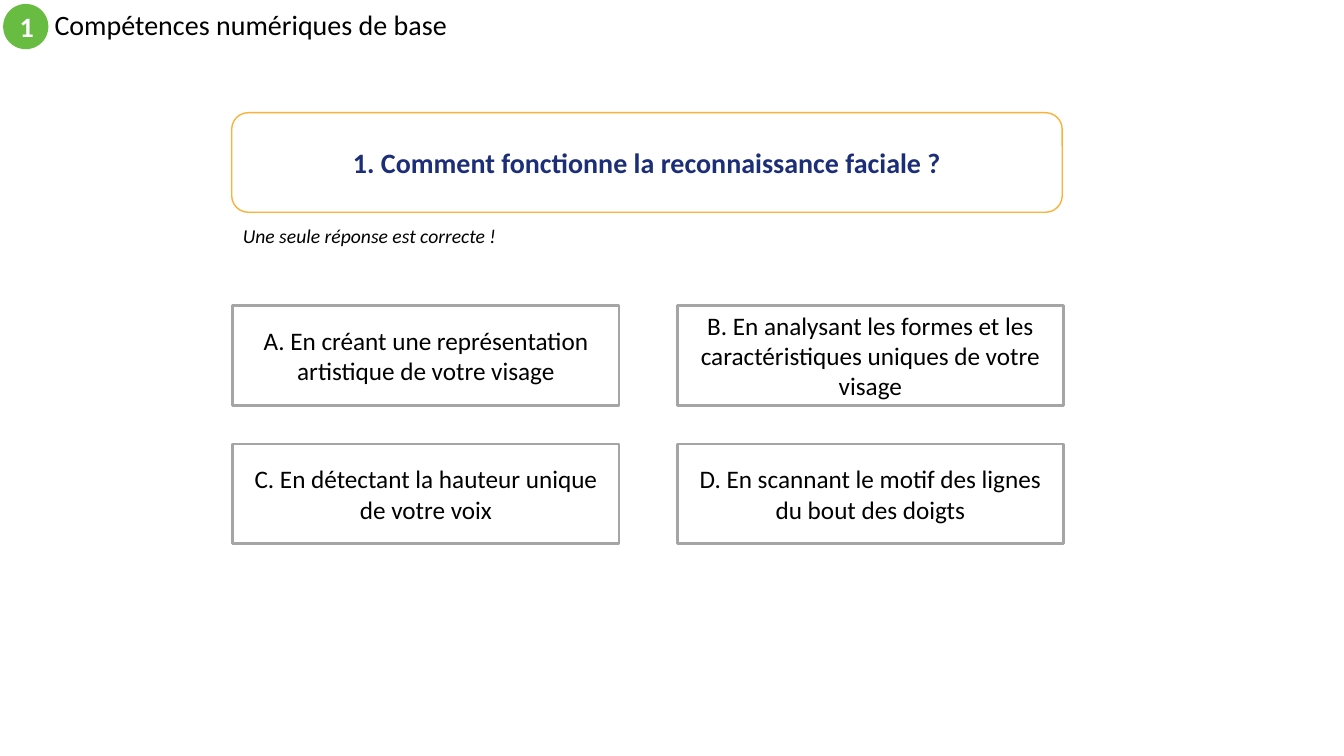
import pptx
import pptx.util
import pptx.dml.color
import pptx.enum.shapes
import pptx.enum.text

Cm = pptx.util.Cm
Pt = pptx.util.Pt
SHAPE = pptx.enum.shapes.MSO_SHAPE
ALIGN = pptx.enum.text.PP_ALIGN
ANCHOR = pptx.enum.text.MSO_ANCHOR

SECTION_NUMBER = "1"
SECTION = "Compétences numériques de base"
QUESTION = "1. Comment fonctionne la reconnaissance faciale ?"
HINT = "Une seule réponse est correcte !"
ANSWERS = [
    "A. En créant une représentation artistique de votre visage",
    "B. En analysant les formes et les caractéristiques uniques de votre visage",
    "C. En détectant la hauteur unique de votre voix",
    "D. En scannant le motif des lignes du bout des doigts",
]
COLORS = {
    "white": "FFFFFF",
    "black": "000000",
    "green": "68BC42",
    "orange": "FCB13A",
    "navy": "1C2E78",
    "gray": "A5A5A5",
}
FONT = "Calibri"
COLUMNS = 2
GRID_LEFT, GRID_TOP = 5.87, 7.7
STEP_X, STEP_Y = 11.2, 3.49
ANSWER_W, BOX_H = 9.73, 2.51


def rgb(name):
    return pptx.dml.color.RGBColor.from_string(COLORS[name])


def write(sp, text, size, color="black", align=ALIGN.CENTER,
          anchor=ANCHOR.MIDDLE, bold=False, italic=False):
    tf = sp.text_frame
    tf.word_wrap = True
    tf.auto_size = pptx.enum.text.MSO_AUTO_SIZE.NONE
    tf.vertical_anchor = anchor
    p = tf.paragraphs[0]
    p.alignment = align
    r = p.add_run()
    r.text = text
    r.font.name = FONT
    r.font.size = Pt(size)
    r.font.bold = bold
    r.font.italic = italic
    r.font.color.rgb = rgb(color)
    return p


def add_box(slide, kind, left, top, width, height, fill, line=None, weight=1):
    sp = slide.shapes.add_shape(kind, Cm(left), Cm(top), Cm(width), Cm(height))
    sp.shadow.inherit = False
    sp.fill.solid()
    sp.fill.fore_color.rgb = rgb(fill)
    if line:
        sp.line.color.rgb = rgb(line)
        sp.line.width = Pt(weight)
    else:
        sp.line.fill.background()
    return sp


def main():
    prs = pptx.Presentation()
    prs.slide_width, prs.slide_height = Cm(33.87), Cm(19.05)
    slide = prs.slides.add_slide(prs.slide_layouts[5])

    title = slide.shapes.title
    title.left, title.top = Cm(1.12), Cm(0.1)
    title.width, title.height = Cm(20.32), Cm(1.14)
    p = write(title, SECTION, 20, align=ALIGN.LEFT)
    p.line_spacing = 0.9

    badge = add_box(slide, SHAPE.OVAL, 0.08, 0.1, 1.14, 1.14, "green")
    write(badge, SECTION_NUMBER, 20, "white", bold=True)

    question = add_box(slide, SHAPE.ROUNDED_RECTANGLE, 5.84, 2.84, 20.93, BOX_H,
                       "white", "orange")
    write(question, QUESTION, 20, "navy", bold=True)

    hint = slide.shapes.add_textbox(Cm(GRID_LEFT), Cm(5.51), Cm(8.86), Cm(0.86))
    write(hint, HINT, 14, align=ALIGN.LEFT, anchor=ANCHOR.TOP, italic=True)

    for i, answer in enumerate(ANSWERS):
        row, col = divmod(i, COLUMNS)
        sp = add_box(slide, SHAPE.RECTANGLE, GRID_LEFT + col * STEP_X,
                     GRID_TOP + row * STEP_Y, ANSWER_W, BOX_H, "white", "gray", 2)
        write(sp, answer, 18)

    prs.save("out.pptx")


if __name__ == "__main__":
    main()
